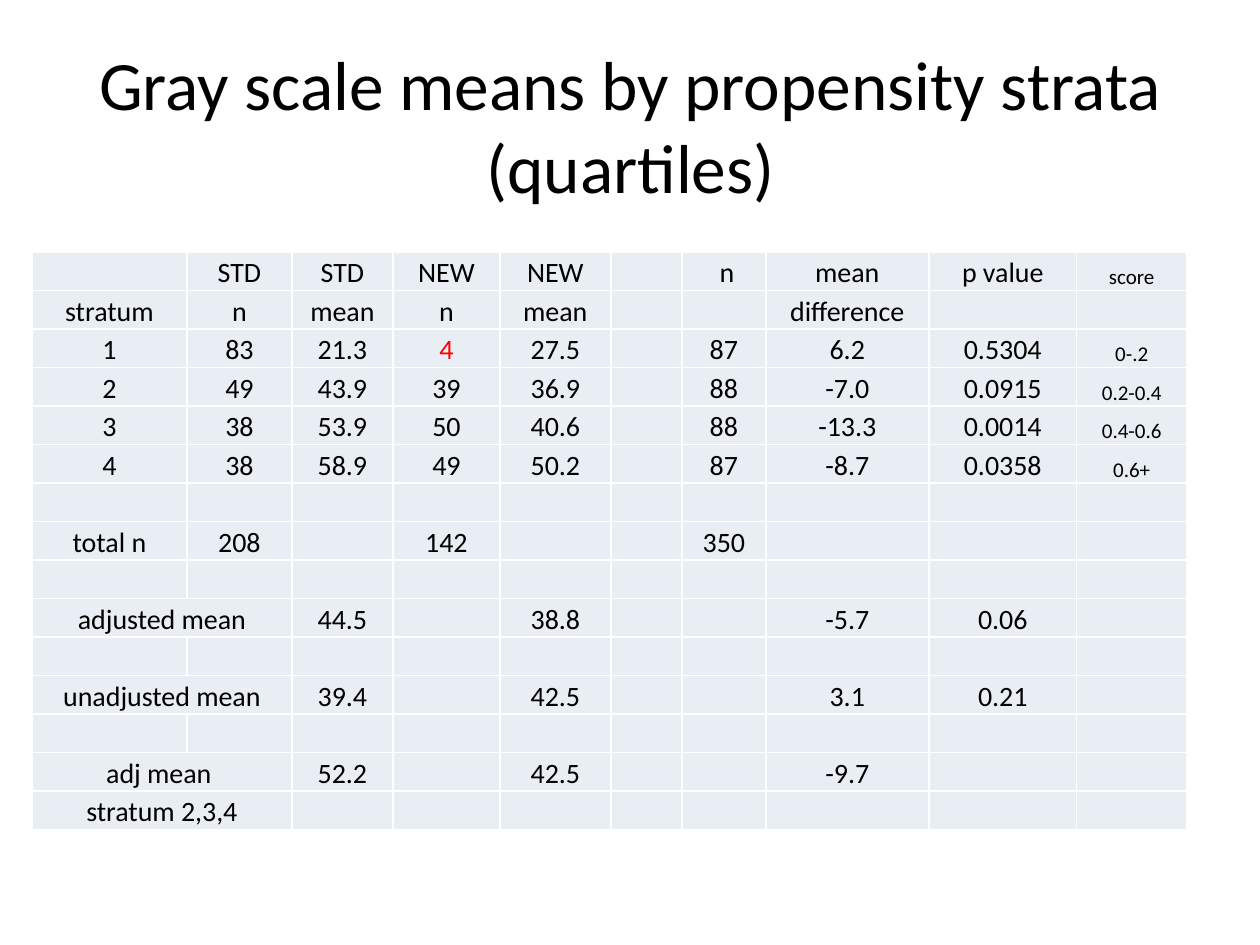
"""Build a slide with a table of gray scale means by propensity stratum."""
from pptx import Presentation
from pptx.dml.color import RGBColor
from pptx.enum.text import MSO_ANCHOR, MSO_AUTO_SIZE, PP_ALIGN
from pptx.util import Pt

TITLE = "Gray scale means by propensity strata\v(quartiles)"
ROWS = [
    ["", "STD", "STD", "NEW", "NEW", "", " n", "mean", "p value", "score"],
    ["stratum", "n", "mean", "n", "mean", "", "", "difference", "", ""],
    ["1", "83", "21.3", "4", "27.5", "", "87", "6.2", "0.5304", "0-.2"],
    ["2", "49", "43.9", "39", "36.9", "", "88", "-7.0", "0.0915", "0.2-0.4"],
    ["3", "38", "53.9", "50", "40.6", "", "88", "-13.3", "0.0014", "0.4-0.6"],
    ["4", "38", "58.9", "49", "50.2", "", "87", "-8.7", "0.0358", "0.6+"],
    [],
    ["total n", "208", "", "142", "", "", "350"],
    [],
    ["adjusted mean", "", "44.5", "", "38.8", "", "", "-5.7", "0.06"],
    [],
    ["unadjusted mean", "", "39.4", "", "42.5", "", "", "3.1", "0.21"],
    [],
    ["adj mean ", "", "52.2", "", "42.5", "", "", "-9.7"],
    ["stratum 2,3,4"],
]
COL_WIDTHS = [155, 105, 101, 107, 111, 71, 84, 163, 148, 110]
MERGED_ROWS = [9, 11, 13, 14]
SMALL_COL = 9
RED_CELL = (2, 3)
TABLE_LEFT, TABLE_TOP, TABLE_HEIGHT = 32, 252, 577
FONT, BLACK, RED, CELL_FILL = "Calibri", "000000", "FF0000", "E9EDF4"


def px(n):
    return round(n * 914400 / 126)


def rgb(color):
    return RGBColor.from_string(color)


def style_text(tf, size, color):
    for p in tf.paragraphs:
        p.alignment = PP_ALIGN.CENTER
        for r in p.runs:
            r.font.name = FONT
            r.font.size = Pt(size)
            r.font.color.rgb = rgb(color)


def add_title(s):
    sp = s.shapes.title
    sp.left, sp.top, sp.width, sp.height = px(32), px(38), px(1197), px(172)
    tf = sp.text_frame
    tf.text = TITLE
    tf.word_wrap = True
    tf.auto_size = MSO_AUTO_SIZE.NONE
    tf.vertical_anchor = MSO_ANCHOR.MIDDLE
    style_text(tf, 39.6, BLACK)


def add_means_table(s):
    table = s.shapes.add_table(
        len(ROWS), len(COL_WIDTHS), px(TABLE_LEFT), px(TABLE_TOP),
        px(sum(COL_WIDTHS)), px(TABLE_HEIGHT)).table
    table.first_row = table.horz_banding = False
    for col, width in zip(table.columns, COL_WIDTHS):
        col.width = px(width)
    for i, texts in enumerate(ROWS):
        table.rows[i].height = px(TABLE_HEIGHT / len(ROWS))
        for j in range(len(COL_WIDTHS)):
            cell = table.cell(i, j)
            cell.fill.solid()
            cell.fill.fore_color.rgb = rgb(CELL_FILL)
            cell.vertical_anchor = MSO_ANCHOR.BOTTOM
            cell.margin_left = cell.margin_right = px(9)
            cell.margin_top = cell.margin_bottom = 0
            if j < len(texts) and texts[j]:
                cell.text_frame.text = texts[j]
                style_text(cell.text_frame, 12 if j == SMALL_COL else 16,
                           RED if (i, j) == RED_CELL else BLACK)
    for i in MERGED_ROWS:
        table.cell(i, 0).merge(table.cell(i, 1))


def main():
    prs = Presentation()
    prs.slide_width, prs.slide_height = px(1260), px(945)
    s = prs.slides.add_slide(prs.slide_layouts[5])
    add_title(s)
    add_means_table(s)
    prs.save("out.pptx")


if __name__ == "__main__":
    main()
